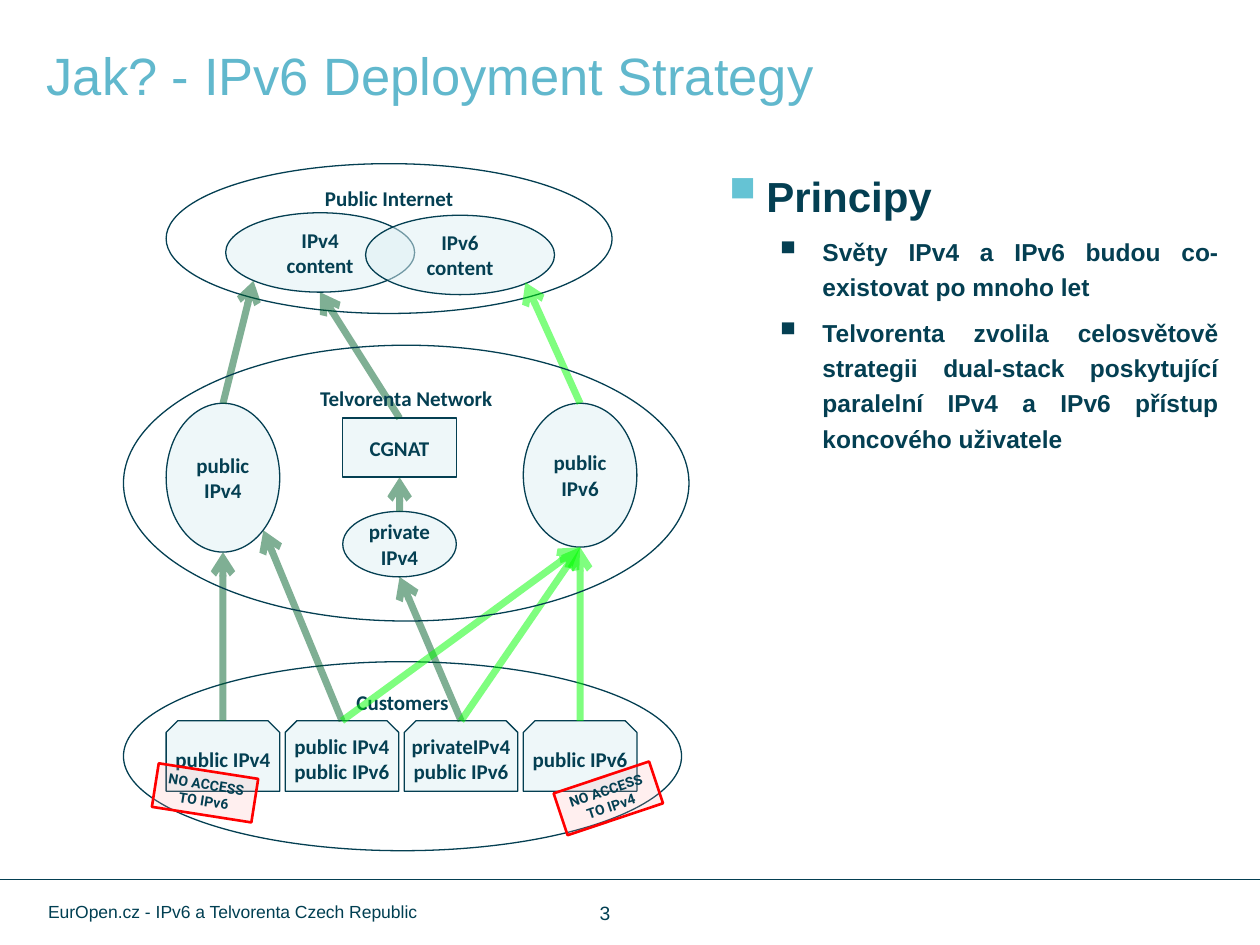
from lxml.etree import SubElement
from pptx import Presentation
from pptx.dml.color import RGBColor
from pptx.enum.shapes import MSO_CONNECTOR, MSO_SHAPE
from pptx.enum.text import MSO_ANCHOR, PP_ALIGN
from pptx.oxml.ns import qn
from pptx.util import Cm, Pt

INK = RGBColor(0x04, 0x3F, 0x52)
FOOTER_INK = RGBColor(0x00, 0x3F, 0x52)
TITLE_BLUE = RGBColor(0x61, 0xB8, 0xCD)
BULLET_BLUE = RGBColor(0x65, 0xC3, 0xD4)
PALE_BLUE = RGBColor(0xDF, 0xF1, 0xF5)
PINK = RGBColor(0xFF, 0xA7, 0xA7)
RED = RGBColor(0xFF, 0x00, 0x00)
DARK_GREEN = RGBColor(0x00, 0x60, 0x2B)
BRIGHT_GREEN = RGBColor(0x00, 0xFE, 0x00)

COLUMN_LEFT = [3.35 + 2.4 * index for index in range(4)]
NODE_WIDTH = 2.29
COLUMN_CENTER = [left + NODE_WIDTH / 2 for left in COLUMN_LEFT]
GATEWAY_LEFT = 6.91
GATEWAY_CENTER = GATEWAY_LEFT + NODE_WIDTH / 2
CUSTOMER_TOP = 14.53
NODE_TOP = 8.13


def set_alpha(properties, percent):
    color = properties.find(qn("a:solidFill"))[0]
    SubElement(color, qn("a:alpha")).set("val", str(percent * 1000))


def add_bullet(paragraph, left, hanging, color):
    properties = paragraph._p.get_or_add_pPr()
    properties.set("marL", str(Cm(left)))
    properties.set("indent", str(-Cm(hanging)))
    bullet_color = SubElement(properties, qn("a:buClr"))
    SubElement(bullet_color, qn("a:srgbClr")).set("val", str(color))
    SubElement(properties, qn("a:buSzPct")).set("val", "150000")
    SubElement(properties, qn("a:buChar")).set("char", "▪")


def write_paragraph(paragraph, text, *, size=12, font="Calibri", color=INK, bold=True,
                    align=PP_ALIGN.CENTER, line_spacing=None, space_after=None):
    paragraph.alignment = align
    paragraph.line_spacing = line_spacing
    paragraph.space_after = space_after
    run = paragraph.add_run()
    run.text = text
    run.font.size = Pt(size)
    run.font.name = font
    run.font.bold = bold
    run.font.color.rgb = color


def set_frame(frame, anchor, insets):
    frame.word_wrap = True
    frame.vertical_anchor = anchor
    frame.margin_left, frame.margin_top, frame.margin_right, frame.margin_bottom = map(Cm, insets)


def add_text(slide, box, text, *, anchor=MSO_ANCHOR.MIDDLE, insets=(0, 0, 0, 0), **text_format):
    frame = slide.shapes.add_textbox(*map(Cm, box)).text_frame
    set_frame(frame, anchor, insets)
    write_paragraph(frame.paragraphs[0], text, font="Arial", bold=False,
                    align=PP_ALIGN.LEFT, **text_format)


def add_node(slide, kind, box, lines, *, fill=PALE_BLUE, alpha=50, line=INK, line_width=0.75,
             anchor=MSO_ANCHOR.MIDDLE, inset=0, rotation=0, **text_format):
    shape = slide.shapes.add_shape(kind, *map(Cm, box))
    shape.shadow.inherit = False
    shape.rotation = rotation
    shape.line.color.rgb = line
    shape.line.width = Pt(line_width)
    if fill is None:
        shape.fill.background()
    else:
        shape.fill.solid()
        shape.fill.fore_color.rgb = fill
        set_alpha(shape.element.spPr, alpha)
    frame = shape.text_frame
    set_frame(frame, anchor, [inset] * 4)
    for index, text in enumerate(lines):
        paragraph = frame.add_paragraph() if index else frame.paragraphs[0]
        write_paragraph(paragraph, text, **text_format)
    return shape


def add_zone(slide, box, label):
    add_node(slide, MSO_SHAPE.OVAL, box, [label], fill=None, anchor=MSO_ANCHOR.TOP)


def add_warning(slide, left, top, rotation, lines):
    add_node(slide, MSO_SHAPE.RECTANGLE, (left, top, 2.03, 0.89), lines, fill=PINK, alpha=18,
             line=RED, line_width=1.5, anchor=MSO_ANCHOR.TOP, inset=0.1, rotation=rotation,
             size=8, font="Roboto")


def add_line(slide, start, end, color, width):
    connector = slide.shapes.add_connector(MSO_CONNECTOR.STRAIGHT, *map(Cm, start + end))
    connector.line.color.rgb = color
    connector.line.width = Pt(width)
    SubElement(connector.element.spPr, qn("a:effectLst"))
    return connector


def add_arrow(slide, start, end, color):
    connector = add_line(slide, start, end, color, 4)
    outline = connector.element.spPr.find(qn("a:ln"))
    set_alpha(outline, 49)
    SubElement(outline, qn("a:tailEnd")).set("type", "arrow")
    return connector


def add_diagram(slide):
    oval = MSO_SHAPE.OVAL
    add_node(slide, oval, (4.55, 4.29, 3.81, 1.6), ["IPv4", "content"])
    add_node(slide, oval, (7.37, 4.34, 3.81, 1.6), ["IPv6", "content"])
    add_zone(slide, (3.35, 3.3, 8.99, 3.02), "Public Internet")

    customers = ["public IPv4", "public IPv4 public IPv6", "privateIPv4 public IPv6", "public IPv6"]
    for left, label in zip(COLUMN_LEFT, customers):
        add_node(slide, MSO_SHAPE.SNIP_2_SAME_RECTANGLE,
                 (left, CUSTOMER_TOP, NODE_WIDTH, 1.42), [label])
    add_zone(slide, (2.49, 13.34, 11.25, 3.81), "Customers")

    add_node(slide, oval, (COLUMN_LEFT[0], NODE_TOP, NODE_WIDTH, 3), ["public", "IPv4"])
    add_node(slide, oval, (COLUMN_LEFT[3], NODE_TOP, NODE_WIDTH, 2.9), ["public", "IPv6"])
    add_node(slide, oval, (GATEWAY_LEFT, 10.31, NODE_WIDTH, 1.32), ["private", "IPv4"])
    gateway = add_node(slide, MSO_SHAPE.RECTANGLE,
                       (GATEWAY_LEFT, 8.43, NODE_WIDTH, 1.19), ["CGNAT"])

    first, second, third, fourth = COLUMN_CENTER
    to_gateway = add_arrow(slide, (GATEWAY_CENTER, 10.31), (GATEWAY_CENTER, 9.62), DARK_GREEN)
    to_gateway.end_connect(gateway, 2)
    from_gateway = add_arrow(slide, (GATEWAY_CENTER, 8.43), (6.45, 5.89), DARK_GREEN)
    from_gateway.begin_connect(gateway, 0)
    ipv4_routes = [
        ((first, CUSTOMER_TOP), (first, 11.13)),
        ((third, CUSTOMER_TOP), (GATEWAY_CENTER, 11.63)),
        ((second, CUSTOMER_TOP), (5.31, 10.69)),
        ((first, NODE_TOP), (5.11, 5.66)),
    ]
    for start, end in ipv4_routes:
        add_arrow(slide, start, end, DARK_GREEN)
    for center in (fourth, third, second):
        add_arrow(slide, (center, CUSTOMER_TOP), (fourth, 11.03), BRIGHT_GREEN)
    add_arrow(slide, (fourth, NODE_TOP), (10.59, 5.69), BRIGHT_GREEN)

    add_warning(slide, 11.25, 15.65, 341.5, ["NO ACCESS", "TO IPv4"])
    add_warning(slide, 3.12, 15.54, 8.9, ["NO ACCESS", "TO IPv6"])
    add_zone(slide, (2.49, 6.96, 11.4, 5.56), "Telvorenta Network")


def add_principles(slide):
    frame = slide.shapes.add_textbox(Cm(14.25), Cm(3.3), Cm(10.57), Cm(14.33)).text_frame
    set_frame(frame, MSO_ANCHOR.TOP, (0.25, 0.13, 0.25, 0.13))
    heading = frame.paragraphs[0]
    add_bullet(heading, 0.76, 0.76, BULLET_BLUE)
    write_paragraph(heading, "Principy", size=24, font="Arial",
                    align=PP_ALIGN.JUSTIFY, space_after=Pt(6))
    principles = [
        "Světy IPv4 a IPv6 budou co-existovat po mnoho let",
        "Telvorenta zvolila celosvětově strategii dual-stack poskytující "
        "paralelní IPv4 a IPv6 přístup koncového uživatele",
    ]
    for text in principles:
        paragraph = frame.add_paragraph()
        add_bullet(paragraph, 2.08, 0.97, INK)
        write_paragraph(paragraph, text, size=14, font="Arial", align=PP_ALIGN.JUSTIFY,
                        line_spacing=1.2, space_after=Pt(6))


def main():
    presentation = Presentation()
    presentation.slide_width = Cm(25.4)
    presentation.slide_height = Cm(19.05)
    slide = presentation.slides.add_slide(presentation.slide_layouts[6])
    add_line(slide, (0, 17.73), (25.4, 17.73), INK, 0.75)
    add_text(slide, (0.94, 0.76, 23.37, 1.47), "Jak? - IPv6 Deployment Strategy",
             anchor=MSO_ANCHOR.TOP, insets=(0, 0.1, 0.1, 0.1), size=30, color=TITLE_BLUE)
    add_text(slide, (12.09, 18.01, 1.22, 0.79), "3", size=11, color=FOOTER_INK)
    add_text(slide, (0.97, 18.01, 10.52, 0.79), "EurOpen.cz - IPv6 a Telvorenta Czech Republic",
             insets=(0, 0.2, 0.2, 0.2), size=10, color=FOOTER_INK, line_spacing=0.9)
    add_diagram(slide)
    add_principles(slide)
    presentation.save("out.pptx")


if __name__ == "__main__":
    main()
